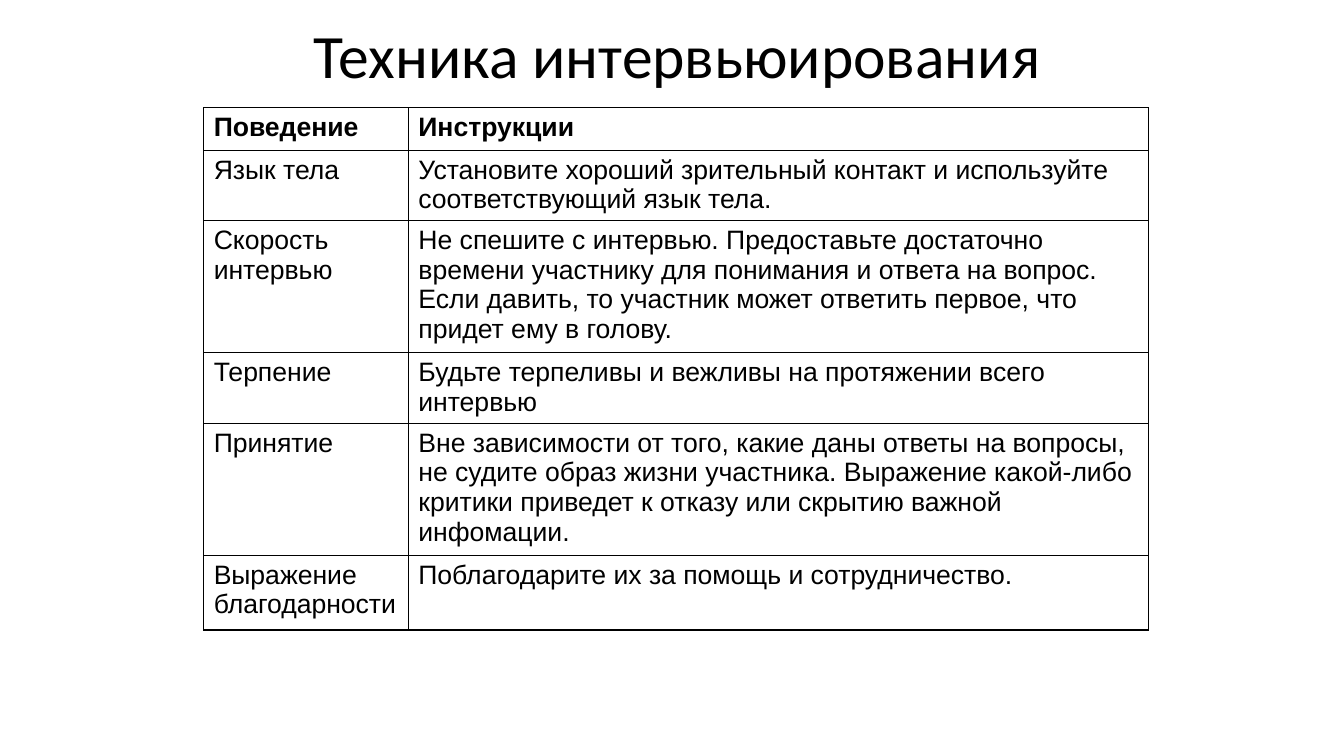
from lxml import etree
from pptx import Presentation
from pptx.dml.color import RGBColor
from pptx.enum.text import MSO_ANCHOR, MSO_AUTO_SIZE, PP_ALIGN
from pptx.oxml.ns import qn
from pptx.util import Inches, Pt

CENTER, LEFT = PP_ALIGN.CENTER, PP_ALIGN.LEFT
MIDDLE, TOP = MSO_ANCHOR.MIDDLE, MSO_ANCHOR.TOP
NO_FIT = MSO_AUTO_SIZE.NONE

COLS = [2.03, 7.34]
ROWS = [
    (0.42, "Поведение", "Инструкции"),
    (0.7, "Язык тела",
     "Установите хороший зрительный контакт и используйте "
     "соответствующий язык тела."),
    (1.31, "Скорость интервью",
     "Не спешите с интервью. Предоставьте достаточно времени участнику "
     "для понимания и ответа на вопрос. Если давить, то участник может "
     "ответить первое, что придет ему в голову."),
    (0.7, "Терпение", "Будьте терпеливы и вежливы на протяжении всего интервью"),
    (1.31, "Принятие",
     "Вне зависимости от того, какие даны ответы на вопросы, не судите "
     "образ жизни участника. Выражение какой-либо критики приведет к отказу "
     "или скрытию важной инфомации."),
    (0.74, "Выражение благодарности",
     "Поблагодарите их за помощь и сотрудничество."),
]


def color(code):
    return RGBColor.from_string(code)


def assign(item, values):
    for name, value in values.items():
        setattr(item, name, value)


class Deck:
    ink, paper = "000000", "FFFFFF"
    pads = {"margin_left": Inches(0.1), "margin_right": Inches(0.1),
            "margin_top": Inches(0.05), "margin_bottom": Inches(0.05)}

    def __init__(self, width, height):
        self.show = Presentation()
        assign(self.show, {"slide_width": Inches(width),
                           "slide_height": Inches(height)})
        self.slide = self.show.slides.add_slide(self.show.slide_layouts[5])

    def label(self, frame, text, align, **style):
        frame.text = text
        para = frame.paragraphs[0]
        assign(para, {"alignment": align, "space_before": Pt(0)})
        assign(para.runs[0].font, style)
        para.runs[0].font.color.rgb = color(self.ink)

    def title(self, text, left, top, width, height):
        box = self.slide.shapes.title
        assign(box, {"left": Inches(left), "top": Inches(top),
                     "width": Inches(width), "height": Inches(height)})
        assign(box.text_frame, {**self.pads, "word_wrap": True,
                                "auto_size": NO_FIT, "vertical_anchor": MIDDLE})
        self.label(box.text_frame, text, CENTER, name="Calibri", size=Pt(44))

    def border(self, cell):
        props = cell._tc.get_or_add_tcPr()
        for spot, side in enumerate(("a:lnL", "a:lnR", "a:lnT", "a:lnB")):
            line = etree.Element(qn(side), w=str(Pt(1)))
            fill = etree.SubElement(line, qn("a:solidFill"))
            etree.SubElement(fill, qn("a:srgbClr"), val=self.ink)
            props.insert(spot, line)

    def table(self, cols, rows, left, top):
        grid = self.slide.shapes.add_table(
            len(rows), len(cols), Inches(left), Inches(top),
            Inches(sum(cols)), Inches(sum(row[0] for row in rows))).table
        grid.horz_banding = False
        for col, width in zip(grid.columns, cols):
            col.width = Inches(width)
        for r, (height, *texts) in enumerate(rows):
            grid.rows[r].height = Inches(height)
            for c, text in enumerate(texts):
                cell = grid.cell(r, c)
                assign(cell, {**self.pads, "vertical_anchor": TOP})
                cell.fill.solid()
                cell.fill.fore_color.rgb = color(self.paper)
                self.border(cell)
                self.label(cell.text_frame, text, LEFT, name="Arial",
                           size=Pt(19), bold=r == 0)


def main():
    deck = Deck(13.33, 7.5)
    # Heading
    deck.title("Техника интервьюирования", 1.78, 0, 9.88, 1.07)
    # Behaviours and instructions
    deck.table(COLS, ROWS, 2.02, 1.07)
    deck.show.save("out.pptx")


if __name__ == "__main__":
    main()
